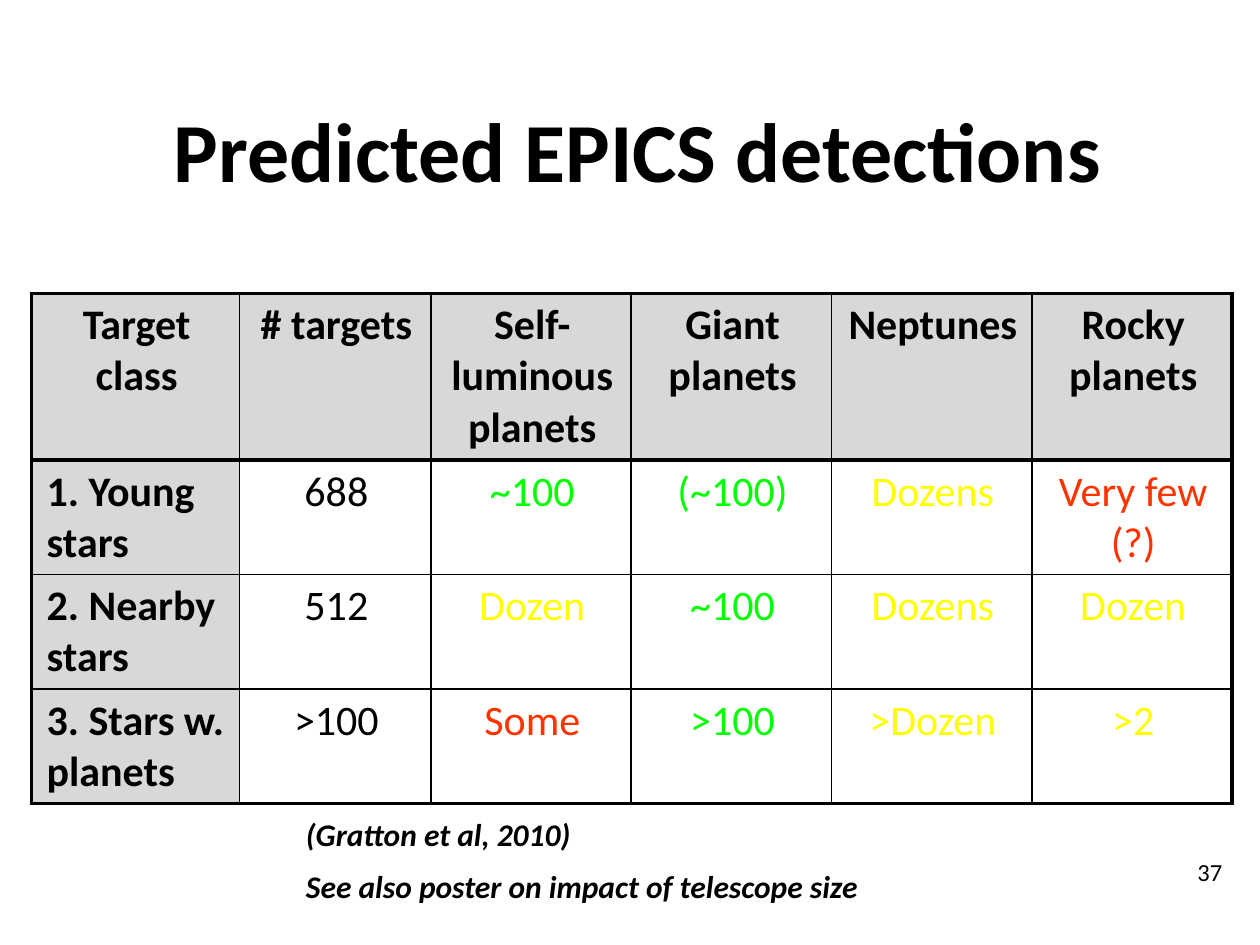
from lxml import etree
from pptx import Presentation, util as u
from pptx.dml.color import RGBColor
from pptx.enum import text
from pptx.oxml.ns import qn

BLACK, GREEN, YELLOW, RED, GREY = "000000", "00FF00", "FFFF00", "FF3300", "B2B2B2"
THIN, OUTER, HEADER_RULE = 1, 2.25, 3
LEFT, CENTER, RIGHT = text.PP_ALIGN.LEFT, text.PP_ALIGN.CENTER, text.PP_ALIGN.RIGHT

HEADINGS = ["Target class", "# targets", "Self-luminous planets",
            "Giant planets", "Neptunes", "Rocky planets"]
DETECTIONS = [
    ("1. Young stars", "688", ("~100", GREEN), ("(~100)", GREEN),
     ("Dozens", YELLOW), ("Very few (?)", RED)),
    ("2. Nearby stars", "512", ("Dozen", YELLOW), ("~100", GREEN),
     ("Dozens", YELLOW), ("Dozen", YELLOW)),
    ("3. Stars w. planets", ">100", ("Some", RED), (">100", GREEN),
     (">Dozen", YELLOW), (">2", YELLOW)),
]
COLUMN_WIDTHS = [1.65, 1.52] + [1.59] * 4
ROW_HEIGHTS = [1.32] + [0.91] * 3


def rgb(hex_color):
    return RGBColor.from_string(hex_color)


def indent(paragraph, left, first=0):
    properties = paragraph._p.get_or_add_pPr()
    properties.set("marL", str(u.Inches(left)))
    properties.set("indent", str(u.Inches(first)))


def set_borders(cell, widths):
    """Draw black left, right, top and bottom borders, widths in points."""
    properties = cell._tc.get_or_add_tcPr()
    for position, (side, width) in enumerate(zip("LRTB", widths)):
        line = etree.Element(qn(f"a:ln{side}"), w=str(u.Pt(width)))
        fill = etree.SubElement(line, qn("a:solidFill"))
        etree.SubElement(fill, qn("a:srgbClr"), val=BLACK)
        properties.insert(position, line)


def shade(cell):
    """Fill the cell with half-transparent grey."""
    cell.fill.solid()
    cell.fill.fore_color.rgb = rgb(GREY)
    color = cell._tc.tcPr.find(qn("a:solidFill")).find(qn("a:srgbClr"))
    etree.SubElement(color, qn("a:alpha"), val="50000")


class SlideBuilder:
    font = "Calibri"

    def __init__(self, slide):
        self.slide = slide

    def add_words(self, paragraph, words, size, color=BLACK, bold=False,
                  italic=False, align=LEFT):
        paragraph.alignment = align
        run = paragraph.add_run()
        run.text = words
        run.font.name = self.font
        run.font.size = u.Pt(size)
        run.font.bold = bold
        run.font.italic = italic
        run.font.color.rgb = rgb(color)

    def title(self, words, *box):
        heading = self.slide.shapes.title
        heading.left, heading.top, heading.width, heading.height = map(u.Inches, box)
        heading.text_frame.vertical_anchor = text.MSO_ANCHOR.MIDDLE
        self.add_words(heading.text_frame.paragraphs[0], words, 48, bold=True, align=CENTER)

    def text_box(self, *box):
        frame = self.slide.shapes.add_textbox(*map(u.Inches, box)).text_frame
        frame.word_wrap = True
        return frame

    def page_number(self, number, *box):
        self.add_words(self.text_box(*box).paragraphs[0], number, 14, align=RIGHT)

    def references(self, lines, *box):
        frame = self.text_box(*box)
        for index, words in enumerate(lines):
            paragraph = frame.add_paragraph() if index else frame.paragraphs[0]
            indent(paragraph, 0.38, -0.38)
            paragraph.space_before = u.Pt(8)
            self.add_words(paragraph, words, 18, bold=True, italic=True)

    def table(self, rows, left, top):
        last_row, last_column = len(rows) - 1, len(COLUMN_WIDTHS) - 1
        table = self.slide.shapes.add_table(
            len(rows), len(COLUMN_WIDTHS), u.Inches(left), u.Inches(top),
            u.Inches(sum(COLUMN_WIDTHS)), u.Inches(sum(ROW_HEIGHTS))).table
        table.first_row = table.horz_banding = False
        for column, width in zip(table.columns, COLUMN_WIDTHS):
            column.width = u.Inches(width)
        for row, height in zip(table.rows, ROW_HEIGHTS):
            row.height = u.Inches(height)

        horizontal = [OUTER, HEADER_RULE] + [THIN] * (last_row - 1) + [OUTER]
        vertical = [OUTER] + [THIN] * last_column + [OUTER]
        for r, entries in enumerate(rows):
            for c, entry in enumerate(entries):
                words, color = (entry, BLACK) if isinstance(entry, str) else entry
                cell = table.cell(r, c)
                is_label = r == 0 or c == 0
                if is_label:
                    shade(cell)
                else:
                    cell.fill.background()
                set_borders(cell, (vertical[c], vertical[c + 1],
                                   horizontal[r], horizontal[r + 1]))
                paragraph = cell.text_frame.paragraphs[0]
                indent(paragraph, 0.02)
                self.add_words(paragraph, words, 24, color, bold=is_label,
                               align=LEFT if c == 0 and r else CENTER)


def main():
    deck = Presentation()
    deck.slide_width, deck.slide_height = u.Inches(10), u.Inches(7.5)
    builder = SlideBuilder(deck.slides.add_slide(deck.slide_layouts.get_by_name("Title Only")))
    builder.title("Predicted EPICS detections", 0.58, 0.42, 8.96, 1.53)
    builder.page_number("37", 7.5, 6.75, 2.3, 0.48)
    builder.table([HEADINGS, *DETECTIONS], 0.25, 2.33)
    builder.references(["(Gratton et al, 2010)",
                        "See also poster on impact of telescope size"],
                       2.33, 6.42, 7.5, 0.92)
    deck.save("out.pptx")


if __name__ == "__main__":
    main()
